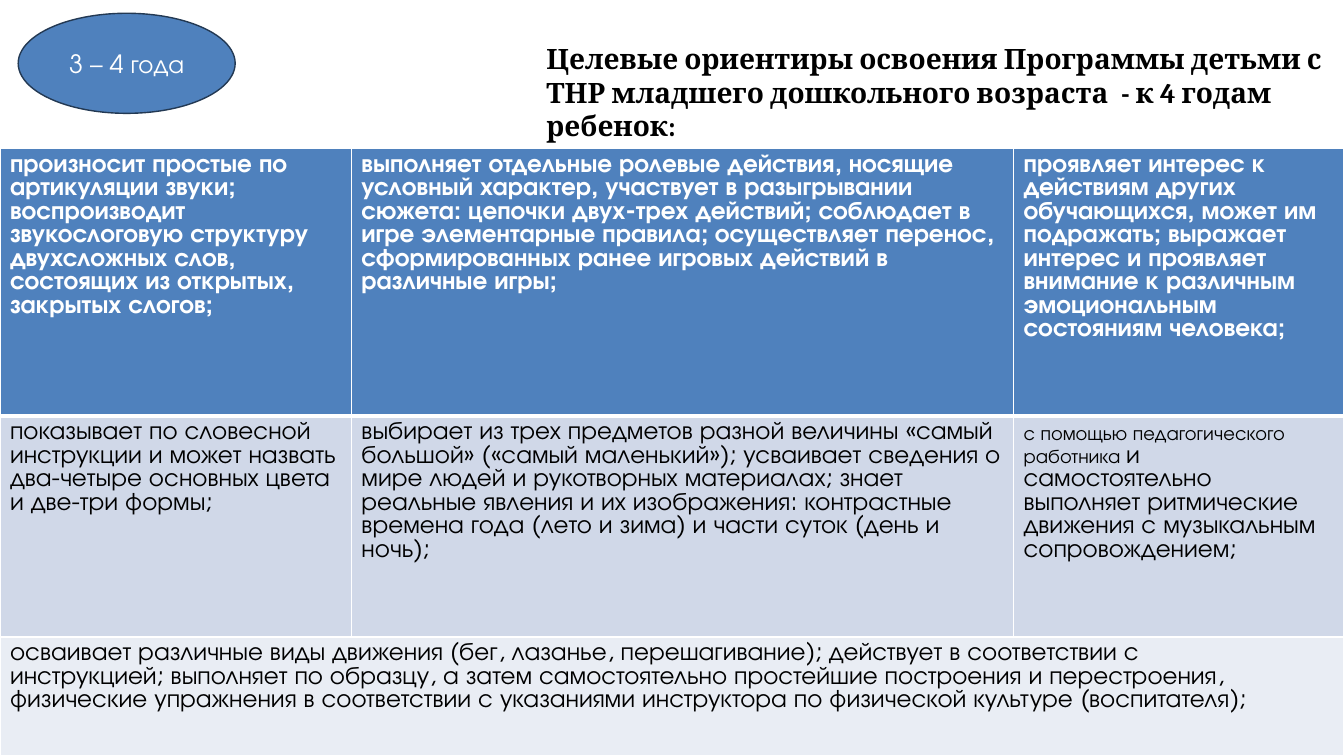
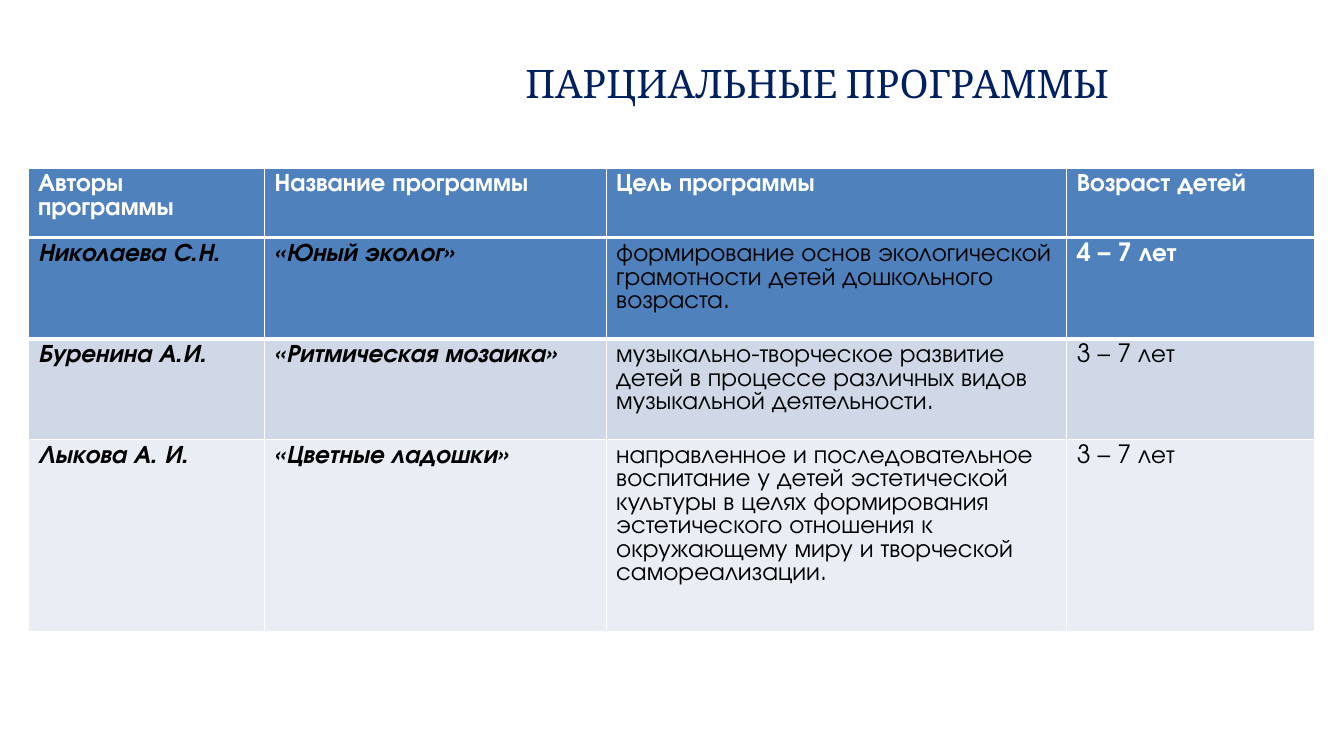
from dataclasses import dataclass

from lxml.etree import SubElement
from pptx import Presentation
from pptx.dml.color import RGBColor
from pptx.enum.shapes import MSO_SHAPE as Shape
from pptx.enum.text import MSO_ANCHOR as Anchor, MSO_AUTO_SIZE as AutoSize, PP_ALIGN as Align
from pptx.oxml.ns import qn
from pptx.util import Pt

WHITE = RGBColor(0xFF, 0xFF, 0xFF)
BLACK = RGBColor(0x00, 0x00, 0x00)
NAVY = RGBColor(0x00, 0x20, 0x60)
BLUE = RGBColor(0x4F, 0x81, 0xBD)
OUTLINE = RGBColor(0x23, 0x39, 0x53)
BAND_DARK = RGBColor(0xD0, 0xD8, 0xE8)
BAND_LIGHT = RGBColor(0xE9, 0xED, 0xF4)
ROW_FILLS = (BLUE, BAND_DARK, BAND_LIGHT)

TITLE_FONT = "Cambria"
BODY_FONT = "TeX Gyre Adventor"
BODY_SIZE = 18
SMALL_SIZE = 14
LINE_PITCH = 16.8
THIN, THICK = 1, 3


@dataclass
class Entry:
    """Content of one table cell; lead is a smaller opening run, span a number of columns."""
    text: str
    color: RGBColor = BLACK
    bold: bool = False
    italic: bool = False
    lead: str = ""
    span: int = 1


def heading(text):
    return Entry(text, WHITE, bold=True)


def emphasis(text):
    return Entry(text, bold=True, italic=True)


def format_run(run, font, size, color, bold=False, italic=False):
    run.font.name = font
    run.font.size = Pt(size)
    run.font.color.rgb = color
    run.font.bold = bold
    run.font.italic = italic


class Deck:
    def __init__(self):
        self.presentation = Presentation()
        self.presentation.slide_width = Pt(960)
        self.presentation.slide_height = Pt(540)
        self.slide = None

    def add_slide(self):
        title_only = self.presentation.slide_layouts[5]
        self.slide = self.presentation.slides.add_slide(title_only)

    def title(self, text, left, top, width, height, size, color, bold=False):
        title = self.slide.shapes.title
        title.left, title.top = Pt(left), Pt(top)
        title.width, title.height = Pt(width), Pt(height)
        frame = title.text_frame
        frame.text = text
        frame.word_wrap = True
        frame.auto_size = AutoSize.NONE
        frame.vertical_anchor = Anchor.TOP
        paragraph = frame.paragraphs[0]
        paragraph.alignment = Align.LEFT
        format_run(paragraph.runs[0], TITLE_FONT, size, color, bold)

    def badge(self, text, left, top, width, height):
        oval = self.slide.shapes.add_shape(Shape.OVAL, Pt(left), Pt(top), Pt(width), Pt(height))
        oval.shadow.inherit = False
        oval.fill.solid()
        oval.fill.fore_color.rgb = BLUE
        oval.line.color.rgb = OUTLINE
        oval.line.width = Pt(1)
        frame = oval.text_frame
        frame.text = text
        frame.vertical_anchor = Anchor.MIDDLE
        paragraph = frame.paragraphs[0]
        paragraph.alignment = Align.CENTER
        format_run(paragraph.runs[0], BODY_FONT, BODY_SIZE, WHITE)

    def table(self, left, top, widths, heights, rows):
        frame = self.slide.shapes.add_table(
            len(heights), len(widths), Pt(left), Pt(top), Pt(sum(widths)), Pt(sum(heights)))
        table = frame.table
        table.first_row = table.horz_banding = False
        for column, width in zip(table.columns, widths):
            column.width = Pt(width)
        for row, height in zip(table.rows, heights):
            row.height = Pt(height)
        for r, entries in enumerate(rows):
            for c in range(len(widths)):
                self.paint_cell(table.cell(r, c), r)
            for c, entry in enumerate(entries):
                cell = table.cell(r, c)
                if entry.span > 1:
                    cell.merge(table.cell(r, c + entry.span - 1))
                self.fill_cell(cell, entry)

    def paint_cell(self, cell, row):
        """Give white borders, thick below the first row, and the fill of the row."""
        properties = cell._tc.get_or_add_tcPr()
        borders = {"L": THIN, "R": THIN,
                   "T": THICK if row == 1 else THIN,
                   "B": THICK if row == 0 else THIN}
        for side, width in borders.items():
            line = SubElement(properties, qn(f"a:ln{side}"), w=str(Pt(width)))
            solid = SubElement(line, qn("a:solidFill"))
            SubElement(solid, qn("a:srgbClr"), val=str(WHITE))
        cell.fill.solid()
        cell.fill.fore_color.rgb = ROW_FILLS[row]

    def fill_cell(self, cell, entry):
        frame = cell.text_frame
        frame.text = entry.lead or entry.text
        if entry.lead:
            frame.paragraphs[0].add_run().text = entry.text
        for paragraph in frame.paragraphs:
            paragraph.line_spacing = Pt(LINE_PITCH)
            for run in paragraph.runs:
                size = SMALL_SIZE if run.text == entry.lead else BODY_SIZE
                format_run(run, BODY_FONT, size, entry.color, entry.bold, entry.italic)

    def save(self):
        self.presentation.save("out.pptx")


def add_targets_slide(deck):
    deck.add_slide()
    deck.title("Целевые ориентиры освоения Программы детьми с ТНР младшего дошкольного "
               "возраста  - к 4 годам ребенок:", 383, 26, 577, 80, 20, BLACK, bold=True)
    deck.table(0, 106, (251, 473, 236), (191, 158, 85), [
        [heading("произносит простые по артикуляции звуки; воспроизводит звукослоговую "
                 "структуру двухсложных слов, состоящих из открытых, закрытых слогов;"),
         heading("выполняет отдельные ролевые действия, носящие условный характер, участвует "
                 "в разыгрывании сюжета: цепочки двух-трех действий; соблюдает в игре "
                 "элементарные правила; осуществляет перенос, сформированных ранее игровых "
                 "действий в различные игры;"),
         heading("проявляет интерес к действиям других обучающихся, может им подражать; "
                 "выражает интерес и проявляет внимание к различным эмоциональным "
                 "состояниям человека;")],
        [Entry("показывает по словесной инструкции и может назвать два-четыре основных "
               "цвета и две-три формы;"),
         Entry("выбирает из трех предметов разной величины «самый большой» («самый "
               "маленький»); усваивает сведения о мире людей и рукотворных материалах; "
               "знает реальные явления и их изображения: контрастные времена года "
               "(лето и зима) и части суток (день и ночь);"),
         Entry("и самостоятельно выполняет ритмические движения с музыкальным "
               "сопровождением;", lead="с помощью педагогического работника ")],
        [Entry("осваивает различные виды движения (бег, лазанье, перешагивание); действует "
               "в соответствии с\n"
               "инструкцией; выполняет по образцу, а затем самостоятельно простейшие "
               "построения и перестроения, физические упражнения в соответствии с "
               "указаниями инструктора по физической культуре (воспитателя);", span=3)],
    ])
    deck.badge("3 – 4 года", 13, 9.5, 155, 71.5)


def add_programmes_slide(deck):
    deck.add_slide()
    deck.title("ПАРЦИАЛЬНЫЕ ПРОГРАММЫ", 368, 39, 448, 41, 28, NAVY)
    left, widths = 20, (169, 244, 329, 177)
    deck.table(left, 120, widths, (50,), [
        [heading(text) for text in
         ("Авторы программы", "Название программы", "Цель программы", "Возраст детей")],
    ])
    deck.table(left, 170, widths, (72, 72, 137), [
        [emphasis("Николаева С.Н."), emphasis("«Юный эколог»"),
         Entry("формирование основ экологической грамотности детей дошкольного возраста."),
         heading("4 – 7 лет")],
        [emphasis("Буренина А.И."), emphasis("«Ритмическая мозаика»"),
         Entry("музыкально-творческое развитие детей в процессе различных видов "
               "музыкальной деятельности."),
         Entry("3 – 7 лет")],
        [emphasis("Лыкова А. И."), emphasis("«Цветные ладошки»"),
         Entry("направленное и последовательное воспитание у детей эстетической культуры "
               "в целях формирования эстетического отношения к окружающему миру и "
               "творческой самореализации."),
         Entry("3 – 7 лет")],
    ])


def main():
    deck = Deck()
    add_targets_slide(deck)
    add_programmes_slide(deck)
    deck.save()


if __name__ == "__main__":
    main()
